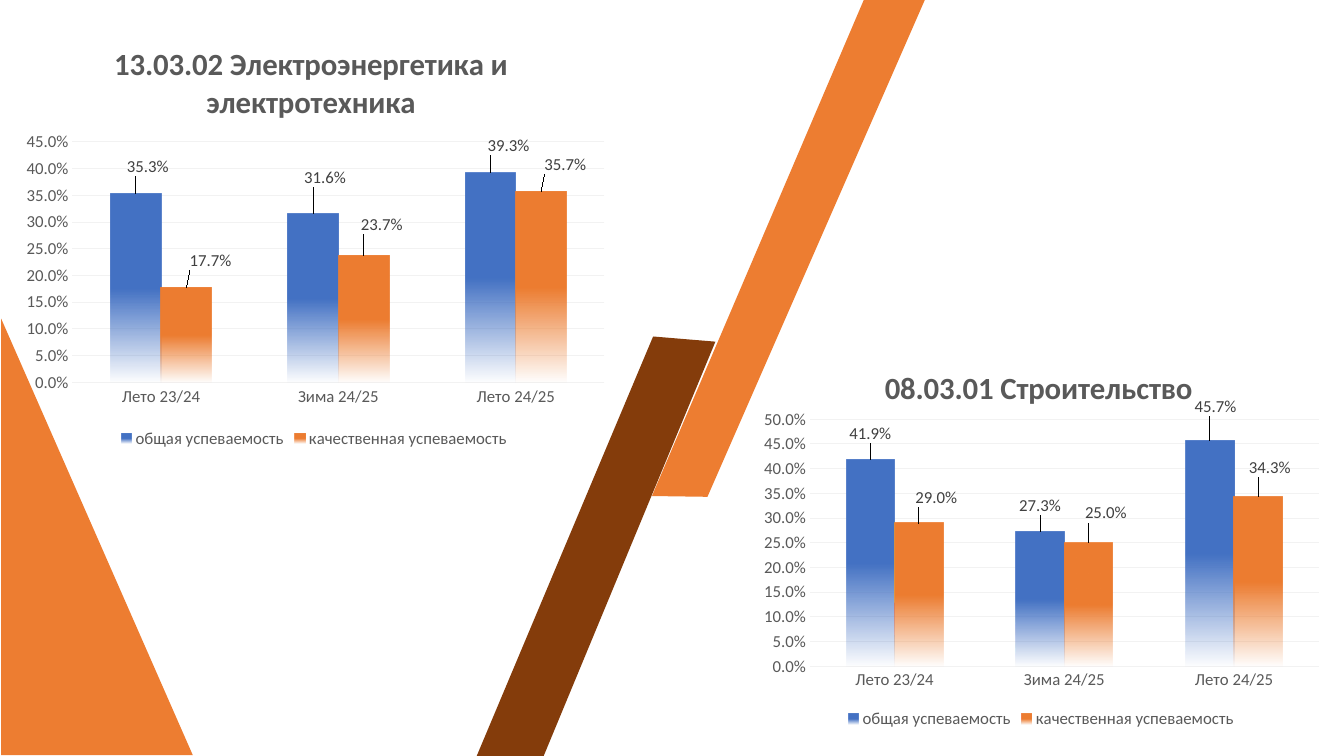
from lxml.etree import SubElement
from pptx import Presentation
from pptx.chart.data import CategoryChartData
from pptx.dml.color import RGBColor
from pptx.enum.chart import (XL_CHART_TYPE, XL_LABEL_POSITION,
                             XL_LEGEND_POSITION, XL_TICK_MARK)
from pptx.enum.shapes import MSO_SHAPE
from pptx.oxml import parse_xml
from pptx.oxml.ns import nsdecls, qn
from pptx.util import Cm, Pt

COLORS = {
    "blue": "4472C4",
    "orange": "ED7D31",
    "brown": "843C0B",
    "text": "595959",
    "label": "404040",
    "grid": "F2F2F2",
}
PERCENT = "0.0%"
TERMS = ["Лето 23/24", "Зима 24/25", "Лето 24/25"]
SERIES_COLORS = {"общая успеваемость": "blue", "качественная успеваемость": "orange"}

# Boxes are in centimetres; title, plot and label shifts are fractions of the chart.
PROGRAMMES = [
    {
        "title": "08.03.01 Строительство",
        "box": (18.95, 8.59, 14.58, 9.88),
        "title_at": (0.22, 0.05),
        "plot": (0.1, 0.2, 0.88, 0.63),
        "rates": [(0.419, 0.273, 0.457), (0.29, 0.25, 0.343)],
        "label_shifts": [[(0, -0.03), (0, -0.03), (0.01, -0.05)],
                         [(0.03, -0.03), (0.03, -0.04), (0.02, -0.04)]],
    },
    {
        "title": "13.03.02 Электроэнергетика и электротехника",
        "box": (0.3, 0.38, 15.24, 11.02),
        "title_at": (0.16, 0.05),
        "plot": (0.1, 0.29, 0.88, 0.55),
        "rates": [(0.353, 0.316, 0.393), (0.177, 0.237, 0.357)],
        "label_shifts": [[(0.02, -0.03), (0.02, -0.05), (0.03, -0.03)],
                         [(0.04, -0.03), (0.03, -0.04), (0.04, -0.03)]],
    },
]
TRIANGLE_BOX = (0.03, 8.03, 4.83, 11)
BANDS = {
    "brown": [(16.46, 8.48), (18.03, 8.61), (13.64, 19.2), (11.96, 19.18)],
    "orange": [(21.79, -0.05), (23.32, -0.03), (17.83, 12.52), (16.43, 12.5)],
}


def rgb(name):
    return RGBColor.from_string(COLORS[name])


def format_font(font, color="text", **values):
    settings = {"name": "Calibri", "size": Pt(12), "bold": False, **values}
    for attribute, value in settings.items():
        setattr(font, attribute, value)
    font.color.rgb = rgb(color)


def paint_flat(shape, color):
    shape.shadow.inherit = False
    shape.fill.solid()
    shape.fill.fore_color.rgb = rgb(color)
    shape.line.fill.background()


def set_layout(parent, index, position, inner=False):
    """Give a chart part a manual layout: x, y and optionally width, height."""
    for old in parent.findall(qn("c:layout")):
        parent.remove(old)
    layout = parse_xml(f"<c:layout {nsdecls('c')}><c:manualLayout/></c:layout>")
    manual = layout[0]
    settings = {"layoutTarget": "inner"} if inner else {}
    if parent.tag != qn("c:dLbl"):
        settings |= {"xMode": "edge", "yMode": "edge"}
    settings |= dict(zip("xywh", position))
    for tag, value in settings.items():
        SubElement(manual, qn(f"c:{tag}"), val=str(value))
    parent.insert(index, layout)


def fade_down(fill, color):
    fill.gradient()
    fill.gradient_angle = 270
    for stop, position in zip(fill.gradient_stops, (0.5, 1)):
        stop.color.rgb = rgb(color)
        stop.position = position
    last_color = fill._xPr.findall(".//" + qn("a:srgbClr"))[-1]
    SubElement(last_color, qn("a:alpha"), val="0")


def format_axes(chart):
    for axis in (chart.category_axis, chart.value_axis):
        axis.major_tick_mark = axis.minor_tick_mark = XL_TICK_MARK.NONE
        axis.format.line.fill.background()
        format_font(axis.tick_labels.font)
    rates_axis = chart.value_axis
    rates_axis.tick_labels.number_format = PERCENT
    rates_axis.tick_labels.number_format_is_linked = False
    rates_axis.has_major_gridlines = True
    gridline = rates_axis.major_gridlines.format.line
    gridline.color.rgb = rgb("grid")
    gridline.width = Pt(0.75)


def format_series(series, shifts):
    fade_down(series.format.fill, SERIES_COLORS[series.name])
    series.invert_if_negative = False
    labels = series.data_labels
    labels.show_value = True
    labels.number_format = PERCENT
    labels.number_format_is_linked = False
    labels.position = XL_LABEL_POSITION.OUTSIDE_END
    format_font(labels.font, "label")
    for index, shift in enumerate(shifts):
        label = series.points[index].data_label
        format_font(label.font, "label")
        label.position = XL_LABEL_POSITION.OUTSIDE_END
        set_layout(label._get_or_add_dLbl(), 1, shift)


def add_programme_chart(slide, programme):
    data = CategoryChartData(number_format=PERCENT)
    data.categories = TERMS
    for name, rates in zip(SERIES_COLORS, programme["rates"]):
        data.add_series(name, rates)
    box = [Cm(length) for length in programme["box"]]
    chart = slide.shapes.add_chart(XL_CHART_TYPE.COLUMN_CLUSTERED, *box, data).chart
    format_font(chart.font)

    chart.has_title = True
    heading = chart.chart_title.text_frame
    heading.text = programme["title"]
    format_font(heading.paragraphs[0].runs[0].font, size=Pt(22), bold=True)
    set_layout(chart.chart_title._element, 1, programme["title_at"])

    chart.has_legend = True
    chart.legend.position = XL_LEGEND_POSITION.BOTTOM
    chart.legend.include_in_layout = False
    format_font(chart.legend.font)

    format_axes(chart)
    columns = chart.plots[0]
    columns.gap_width = 150
    columns.overlap = 0
    columns.vary_by_categories = False
    for series, shifts in zip(columns.series, programme["label_shifts"]):
        format_series(series, shifts)
    plot_area = chart._chartSpace.find(".//" + qn("c:plotArea"))
    set_layout(plot_area, 0, programme["plot"], inner=True)


def add_decoration(slide):
    corner = slide.shapes.add_shape(MSO_SHAPE.ISOSCELES_TRIANGLE,
                                    *[Cm(length) for length in TRIANGLE_BOX])
    corner.adjustments[0] = 0
    paint_flat(corner, "orange")
    for color, corners in BANDS.items():
        start, *others = [(Cm(x), Cm(y)) for x, y in corners]
        outline = slide.shapes.build_freeform(*start)
        outline.add_line_segments(others, close=True)
        paint_flat(outline.convert_to_shape(), color)


def main():
    deck = Presentation()
    deck.slide_width, deck.slide_height = Cm(33.87), Cm(19.05)
    slide = deck.slides.add_slide(deck.slide_layouts[6])
    add_decoration(slide)
    for programme in PROGRAMMES:
        add_programme_chart(slide, programme)
    deck.save("out.pptx")


if __name__ == "__main__":
    main()
